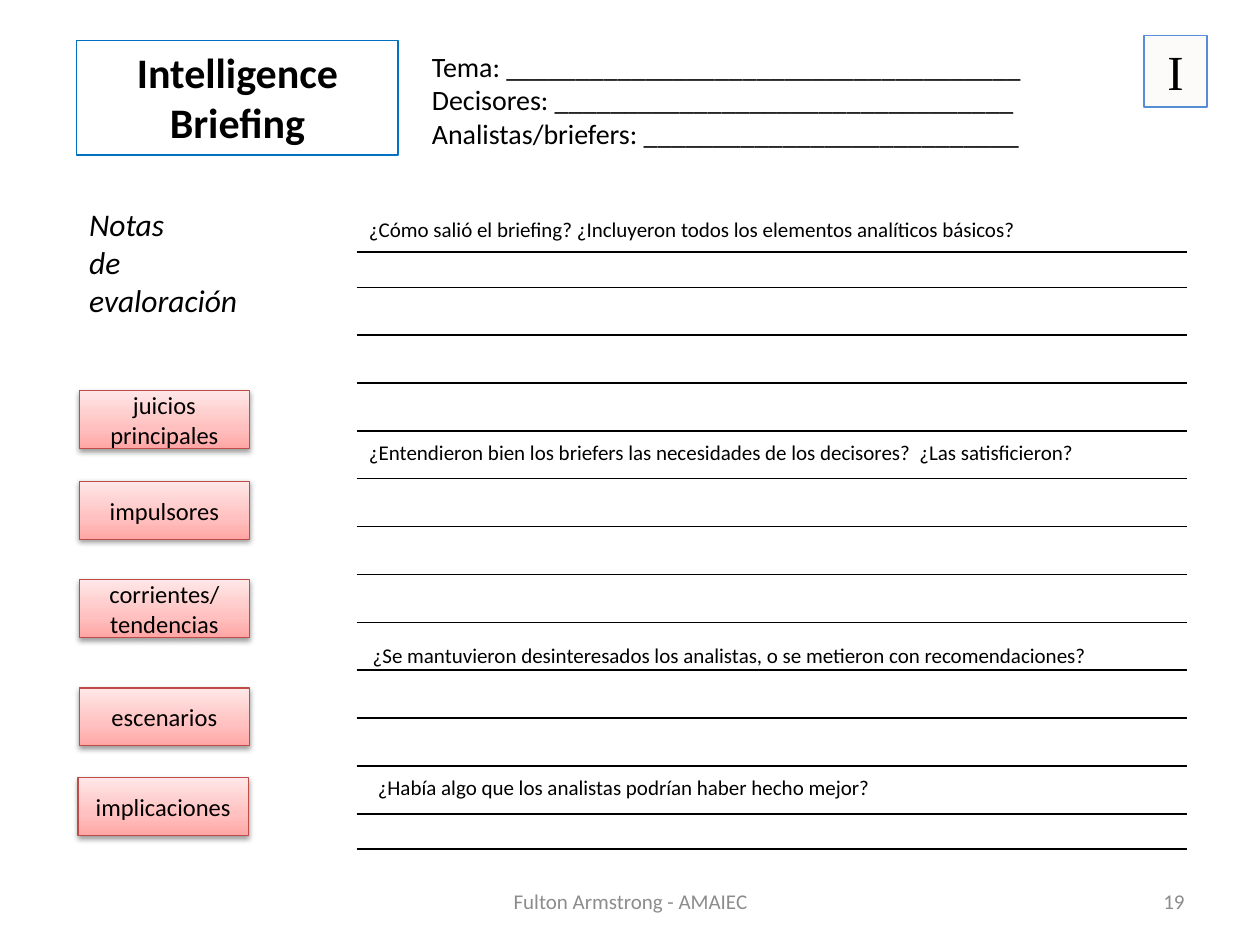
from lxml import etree
from pptx import Presentation
from pptx import util as u
from pptx.dml import color
from pptx.enum import shapes, text
from pptx.oxml import parse_xml
from pptx.oxml.ns import nsdecls, qn

COLORS = {
    "ink": "000000", "title_line": "0070C0", "badge": "FCFBF9",
    "badge_line": "558ED5", "label_line": "BF4C48", "footer": "8C8C8C",
    "label_low": "FFA6A5", "label_mid": "FFC0BF", "label_high": "FFE7E7",
}
COLUMNS, ROWS = 100, 75
LEFT, CENTER, RIGHT = text.PP_ALIGN.LEFT, text.PP_ALIGN.CENTER, text.PP_ALIGN.RIGHT
TOP, MIDDLE = text.MSO_ANCHOR.TOP, text.MSO_ANCHOR.MIDDLE

deck = Presentation()
deck.slide_width, deck.slide_height = u.Inches(10), u.Inches(7.5)
page = deck.slides.add_slide(deck.slide_layouts[6])
column, row = deck.slide_width / COLUMNS, deck.slide_height / ROWS


def place(left, top, width, height):
    return [u.Emu(int(n * step)) for n, step in
            zip((left, top, width, height), (column, row, column, row))]


def add_box(area, lines, size, align=LEFT, anchor=TOP, outline=None, wrap=True,
            ink="ink", face="Calibri", bold=False, italic=False):
    if outline:
        box = page.shapes.add_shape(shapes.MSO_SHAPE.RECTANGLE, *place(*area))
        box.shadow.inherit = False
        box.fill.background()
        box.line.color.rgb = color.RGBColor.from_string(COLORS[outline])
        box.line.width = u.Pt(0.75)
    else:
        box = page.shapes.add_textbox(*place(*area))
    frame = box.text_frame
    frame.word_wrap, frame.vertical_anchor = wrap, anchor
    for index, line in enumerate(lines):
        para = frame.add_paragraph() if index else frame.paragraphs[0]
        para.alignment = align
        span = para.add_run()
        span.text = line
        span.font.name, span.font.size = face, u.Pt(size)
        span.font.bold, span.font.italic = bold, italic
        span.font.color.rgb = color.RGBColor.from_string(COLORS[ink])
    return box


add_box((6.1, 3.2, 25.5, 9.1), ["Intelligence Briefing"], 24, CENTER,
        outline="title_line", bold=True)
add_box((6.1, 15.8, 16.4, 11.9), ["Notas", "de", "evaloración"], 18, italic=True)

row_heights = [2.8] + [3.8] * 11 + [2.8]
notes = page.shapes.add_table(
    len(row_heights), 1, *place(28.3, 20, 65.9, sum(row_heights))).table
notes.first_row = notes.horz_banding = False
for index, height in enumerate(row_heights):
    notes.rows[index].height = u.Emu(int(height * row))
    cell = notes.cell(index, 0)
    cell.fill.background()
    end = etree.SubElement(cell.text_frame.paragraphs[0]._p, qn("a:endParaRPr"))
    end.set("sz", "1000")
    properties = cell._tc.get_or_add_tcPr()
    for order, side in enumerate(("lnL", "lnR", "lnT", "lnB")):
        paint = "<a:noFill/>"
        if side in ("lnT", "lnB"):
            paint = f'<a:solidFill><a:srgbClr val="{COLORS["ink"]}"/></a:solidFill>'
        properties.insert(order, parse_xml(
            f'<a:{side} {nsdecls("a")} w="{u.Pt(1)}">{paint}</a:{side}>'))

questions = [
    (28.3, 16.7, "¿Cómo salió el briefing? ¿Incluyeron todos los elementos analíticos básicos?"),
    (28.3, 34.4, "¿Entendieron bien los briefers las necesidades de los decisores?  ¿Las satisficieron?"),
    (28.6, 50.5, "¿Se mantuvieron desinteresados los analistas, o se metieron con recomendaciones?"),
    (29, 61, "¿Había algo que los analistas podrían haber hecho mejor?"),
]
for left, top, question in questions:
    add_box((left, top, 59, 3), [question], 12)

blanks = [("Tema: ", 37), ("Decisores: ", 33), ("Analistas/briefers: ", 27)]
add_box((33.3, 3.4, 51, 9.1), [name + "_" * count for name, count in blanks], 16, wrap=False)

badge = add_box((90.8, 2.8, 5, 5.7), ["I"], 28, CENTER,
                outline="badge_line", face="Times New Roman")
badge.fill.solid()
badge.fill.fore_color.rgb = color.RGBColor.from_string(COLORS["badge"])

stops = "".join(
    f'<a:gs pos="{share * 1000}"><a:srgbClr val="{COLORS[name]}"/></a:gs>'
    for share, name in ((0, "label_low"), (35, "label_mid"), (100, "label_high")))
gradient = (f'<a:gradFill {nsdecls("a")} rotWithShape="1"><a:gsLst>{stops}</a:gsLst>'
            '<a:lin ang="16200000" scaled="0"/></a:gradFill>')
shadow = (f'<a:outerShdw {nsdecls("a")} blurRad="{u.Pt(3.1)}" dist="{u.Pt(1.6)}" '
          f'dir="5400000" rotWithShape="0"><a:srgbClr val="{COLORS["ink"]}">'
          '<a:alpha val="38000"/></a:srgbClr></a:outerShdw>')
labels = [
    (6.3, 31, "juicios principales"), (6.3, 38.2, "impulsores"),
    (6.3, 46, "corrientes/ tendencias"), (6.3, 54.6, "escenarios"),
    (6.2, 61.7, "implicaciones"),
]
for left, top, label in labels:
    box = add_box((left, top, 13.5, 4.6), [label], 14, CENTER, MIDDLE, "label_line")
    properties = box._element.spPr
    properties.replace(properties.find(qn("a:noFill")), parse_xml(gradient))
    properties.find(qn("a:effectLst")).append(parse_xml(shadow))

add_box((34.2, 69.5, 31.7, 4), ["Fulton Armstrong - AMAIEC"], 12, CENTER, MIDDLE, ink="footer")
add_box((71.7, 69.5, 23.3, 4), ["19"], 12, RIGHT, MIDDLE, ink="footer")

deck.save("out.pptx")
